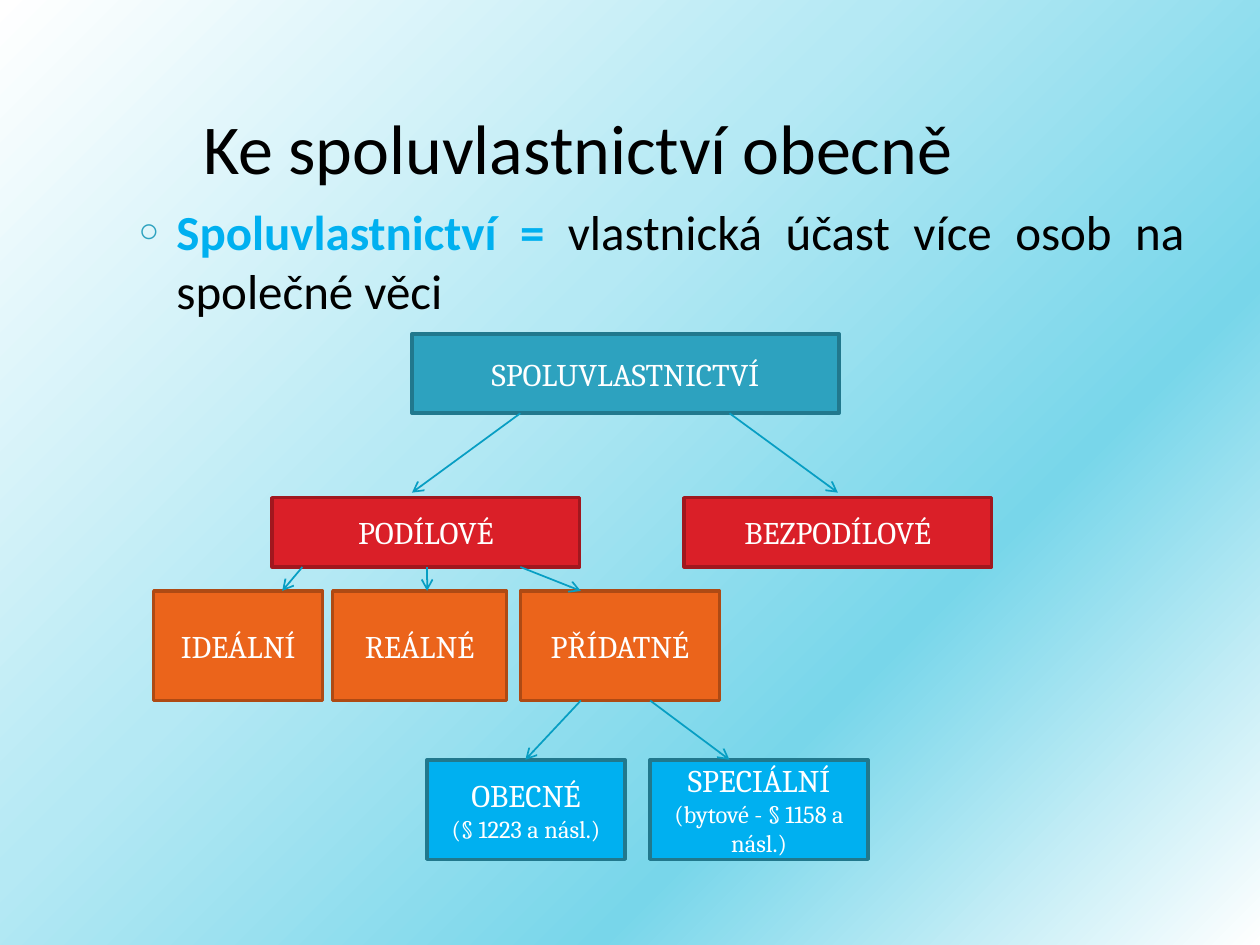
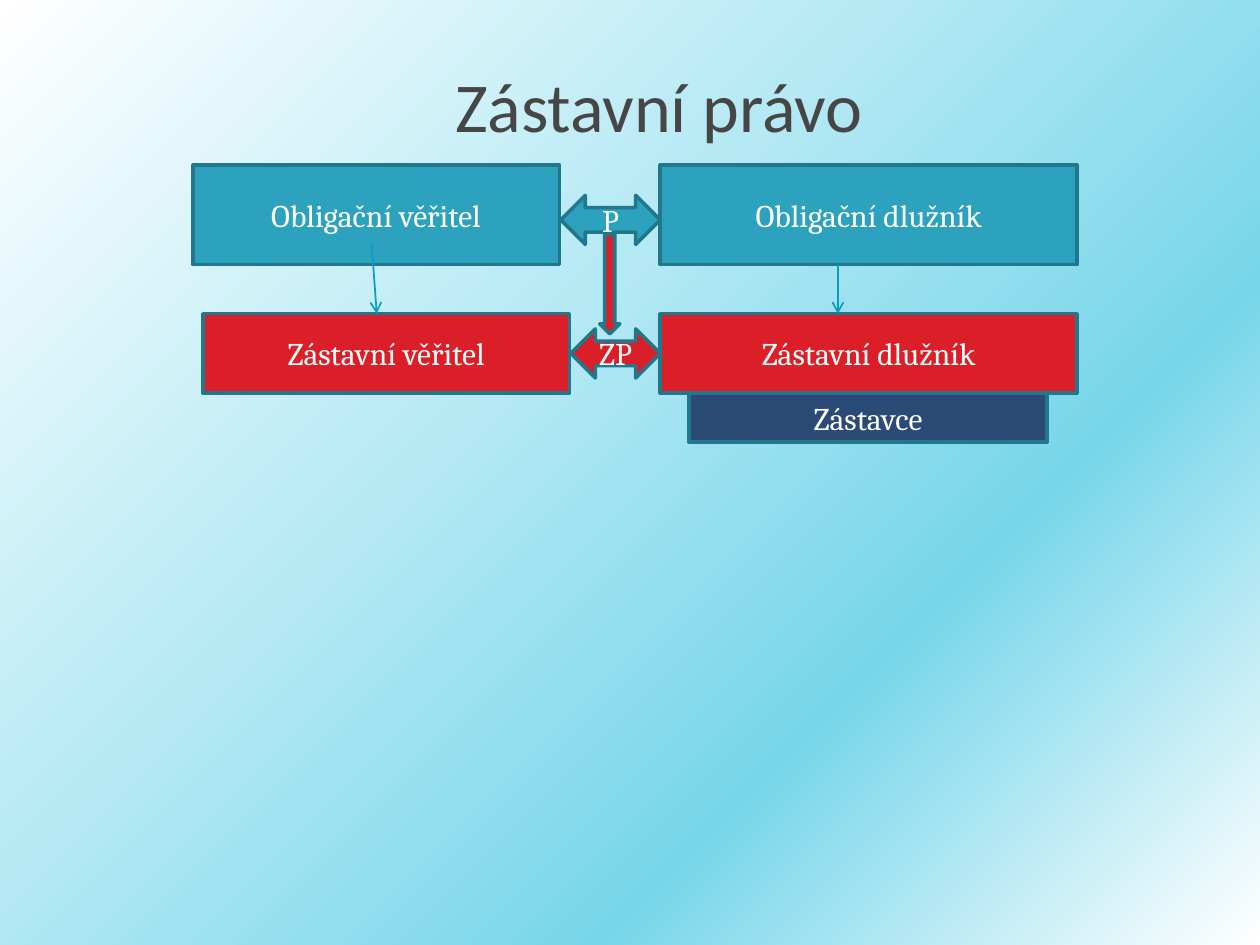
from dataclasses import dataclass
from typing import Any

from lxml import etree
from pptx import Presentation
from pptx.dml.color import RGBColor
from pptx.enum.shapes import MSO_CONNECTOR, MSO_SHAPE
from pptx.enum.text import MSO_ANCHOR, MSO_AUTO_SIZE, PP_ALIGN
from pptx.oxml.ns import qn
from pptx.util import Inches, Pt

RECTANGLE = MSO_SHAPE.RECTANGLE
TWO_WAY = MSO_SHAPE.LEFT_RIGHT_ARROW
DOWN = MSO_SHAPE.DOWN_ARROW
STRAIGHT = MSO_CONNECTOR.STRAIGHT
CENTER, JUSTIFY = PP_ALIGN.CENTER, PP_ALIGN.JUSTIFY

WIDTH, HEIGHT = Inches(10), Inches(7.5)
COLUMNS, ROWS = 100, 75
TITLE_AND_BODY, TITLE_ONLY = 1, 5

COLORS = {
    "black": "000000", "grey": "464646", "white": "FFFFFF",
    "teal": "2DA2BF", "teal_edge": "21788D",
    "red": "DA1F28", "red_edge": "A1171E",
    "orange": "EB641B", "orange_edge": "AE4A14",
    "sky": "00B0F0", "navy": "2B4A76", "arrow": "079EC3",
}
BACKGROUND = {0: "FFFFFF", 40: "B5E9F4", 70: "78D6EA", 100: "FFFFFF"}

TITLE_FONT = {"name": "Calibri", "size": Pt(40)}
BODY_FONT = {"name": "Calibri", "size": Pt(28)}
LABEL_FONT = {"name": "Cambria", "size": Pt(18)}
DETAIL_FONT = {"name": "Cambria", "size": Pt(14)}


@dataclass(frozen=True)
class Area:
    """A rectangle in grid columns and rows."""
    left: float
    top: float
    width: float
    height: float

    @property
    def bottom(self) -> float:
        return self.top + self.height


@dataclass(frozen=True)
class Node:
    area: Area
    lines: tuple[str, ...]
    fill: str
    edge: str = "teal_edge"
    kind: Any = RECTANGLE


@dataclass(frozen=True)
class Arrow:
    start: tuple[float, float]
    end: tuple[float, float]


def across(columns: float) -> int:
    return round(WIDTH * columns / COLUMNS)


def down(rows: float) -> int:
    return round(HEIGHT * rows / ROWS)


def color(name: str) -> RGBColor:
    return RGBColor.from_string(COLORS[name])


def apply(target: Any, values: dict[str, Any]) -> None:
    for name, value in values.items():
        setattr(target, name, value)


def place(shape: Any, area: Area) -> None:
    apply(shape, {"left": across(area.left), "top": down(area.top),
                  "width": across(area.width), "height": down(area.height)})


def add_span(para: Any, text: str, font: dict[str, Any], tint: str) -> None:
    span = para.add_run()
    span.text = text
    apply(span.font, font)
    span.font.color.rgb = color(tint)


def paint_background(deck: Any) -> None:
    """Give every slide the diagonal gradient through the master."""
    fill = deck.slide_master.background.fill
    fill.gradient()
    fill.gradient_angle = 315
    stops = deck.slide_master.element.find(".//" + qn("a:gsLst"))
    for stop in list(stops):
        stops.remove(stop)
    for percent, tint in BACKGROUND.items():
        stop = etree.SubElement(stops, qn("a:gs"), pos=str(percent * 1000))
        etree.SubElement(stop, qn("a:srgbClr"), val=tint)


def add_page(deck: Any, layout: int, title: str, area: Area, tint: str) -> Any:
    page = deck.slides.add_slide(deck.slide_layouts[layout])
    place(page.shapes.title, area)
    frame = page.shapes.title.text_frame
    apply(frame, {"vertical_anchor": MSO_ANCHOR.BOTTOM, "word_wrap": True,
                  "auto_size": MSO_AUTO_SIZE.NONE})
    para = frame.paragraphs[0]
    para.alignment = CENTER
    add_span(para, title, TITLE_FONT, tint)
    return page


def add_definition(page: Any, area: Area, term: str, meaning: str) -> None:
    body = page.placeholders[1]
    place(body, area)
    body.text_frame.auto_size = MSO_AUTO_SIZE.NONE
    para = body.text_frame.paragraphs[0]
    apply(para, {"alignment": JUSTIFY, "space_before": Pt(6)})
    add_span(para, term, BODY_FONT | {"bold": True}, "sky")
    add_span(para, meaning, BODY_FONT | {"bold": False}, "black")
    layout = para._p.get_or_add_pPr()
    layout.set("marL", str(Inches(0.3)))
    layout.set("indent", str(-Inches(0.3)))
    tint = etree.SubElement(layout, qn("a:buClr"))
    etree.SubElement(tint, qn("a:srgbClr"), val=COLORS["teal"])
    etree.SubElement(layout, qn("a:buSzPct"), val="70000")
    etree.SubElement(layout, qn("a:buChar"), char="○")


def add_node(page: Any, node: Node) -> None:
    shape = page.shapes.add_shape(node.kind, 0, 0, 0, 0)
    place(shape, node.area)
    shape.shadow.inherit = False
    shape.fill.solid()
    shape.fill.fore_color.rgb = color(node.fill)
    shape.line.color.rgb = color(node.edge)
    shape.line.width = Pt(2)
    frame = shape.text_frame
    apply(frame, {"vertical_anchor": MSO_ANCHOR.MIDDLE, "word_wrap": True})
    for index, text in enumerate(node.lines):
        para = frame.add_paragraph() if index else frame.paragraphs[0]
        para.alignment = CENTER
        add_span(para, text, DETAIL_FONT if index else LABEL_FONT, "white")


def add_arrow(page: Any, arrow: Arrow) -> None:
    (start_x, start_y), (end_x, end_y) = arrow.start, arrow.end
    line = page.shapes.add_connector(STRAIGHT, across(start_x), down(start_y),
                                     across(end_x), down(end_y))
    line.line.color.rgb = color("arrow")
    line.line.width = Pt(1)
    etree.SubElement(line.line._get_or_add_ln(), qn("a:tailEnd"), type="arrow")
    etree.SubElement(line._element.spPr, qn("a:effectLst"))


def draw(page: Any, nodes: list[Node], arrows: list[Arrow]) -> None:
    for node in nodes:
        add_node(page, node)
    for arrow in arrows:
        add_arrow(page, arrow)


def build_co_ownership(deck: Any) -> None:
    page = add_page(deck, TITLE_AND_BODY, "Ke spoluvlastnictví obecně",
                    Area(5, 3, 81.7, 12.5), "black")
    add_definition(page, Area(10, 15.5, 85, 54.1), "Spoluvlastnictví = ",
                   "vlastnická účast více osob na společné věci")

    root = Area(32.7, 26.5, 33.9, 6.3)
    shared, joint = (Area(left, 39.5, 24.4, 5.5) for left in (21.6, 54.3))
    ideal, real, accessory = (
        Area(left, 46.9, width, 8.7)
        for left, width in ((12.2, 13.4), (26.4, 13.8), (41.3, 15.8)))
    general, special = (Area(left, 60.3, width, 7.9)
                        for left, width in ((33.9, 15.7), (51.6, 17.3)))
    nodes = [
        Node(root, ("SPOLUVLASTNICTVÍ",), "teal"),
        Node(shared, ("PODÍLOVÉ",), "red", "red_edge"),
        Node(joint, ("BEZPODÍLOVÉ",), "red", "red_edge"),
        Node(ideal, ("IDEÁLNÍ",), "orange", "orange_edge"),
        Node(real, ("REÁLNÉ",), "orange", "orange_edge"),
        Node(accessory, ("PŘÍDATNÉ",), "orange", "orange_edge"),
        Node(general, ("OBECNÉ", "(§ 1223 a násl.)"), "sky"),
        Node(special, ("SPECIÁLNÍ", "(bytové - § 1158 a násl.)"), "sky"),
    ]
    levels = [
        (root.bottom, 39.1, ((41.3, 32.7), (57.9, 66.5))),
        (shared.bottom, ideal.top, ((24, 22.4), (33.9, 33.9), (41.3, 46.1))),
        (accessory.bottom, general.top, ((46.1, 41.7), (51.6, 57.9))),
    ]
    arrows = [Arrow((start, upper), (end, lower))
              for upper, lower, spans in levels for start, end in spans]
    draw(page, nodes, arrows)


def build_pledge(deck: Any) -> None:
    page = add_page(deck, TITLE_ONLY, "Zástavní právo",
                    Area(9.8, 2.1, 85, 10), "grey")
    creditor = Area(15.3, 13.1, 29.1, 7.9)
    debtor = Area(52.4, creditor.top, 33.1, creditor.height)
    pledgee = Area(16.1, 24.9, creditor.width, 6.3)
    pledgor = Area(debtor.left, pledgee.top, debtor.width, pledgee.height)
    nodes = [
        Node(creditor, ("Obligační věřitel",), "teal"),
        Node(debtor, ("Obligační dlužník",), "teal"),
        Node(pledgee, ("Zástavní věřitel",), "red"),
        Node(pledgor, ("Zástavní dlužník",), "red"),
        Node(Area(54.7, pledgor.bottom, 28.4, 3.9), ("Zástavce",), "navy"),
        Node(Area(44.5, 15.5, 7.9, 3.9), ("P",), "teal", kind=TWO_WAY),
        Node(Area(45.3, 26.1, 7.1, 3.9), ("ZP",), "red", kind=TWO_WAY),
        Node(Area(47.6, 18.6, 1.6, 7.9), (), "red", kind=DOWN),
    ]
    arrows = [
        Arrow((66.5, debtor.bottom), (66.5, pledgor.top)),
        Arrow((29.5, 19.4), (29.9, pledgee.top)),
    ]
    draw(page, nodes, arrows)


def main() -> None:
    deck = Presentation()
    apply(deck, {"slide_width": WIDTH, "slide_height": HEIGHT})
    paint_background(deck)
    build_co_ownership(deck)
    build_pledge(deck)
    deck.save("out.pptx")


if __name__ == "__main__":
    main()
